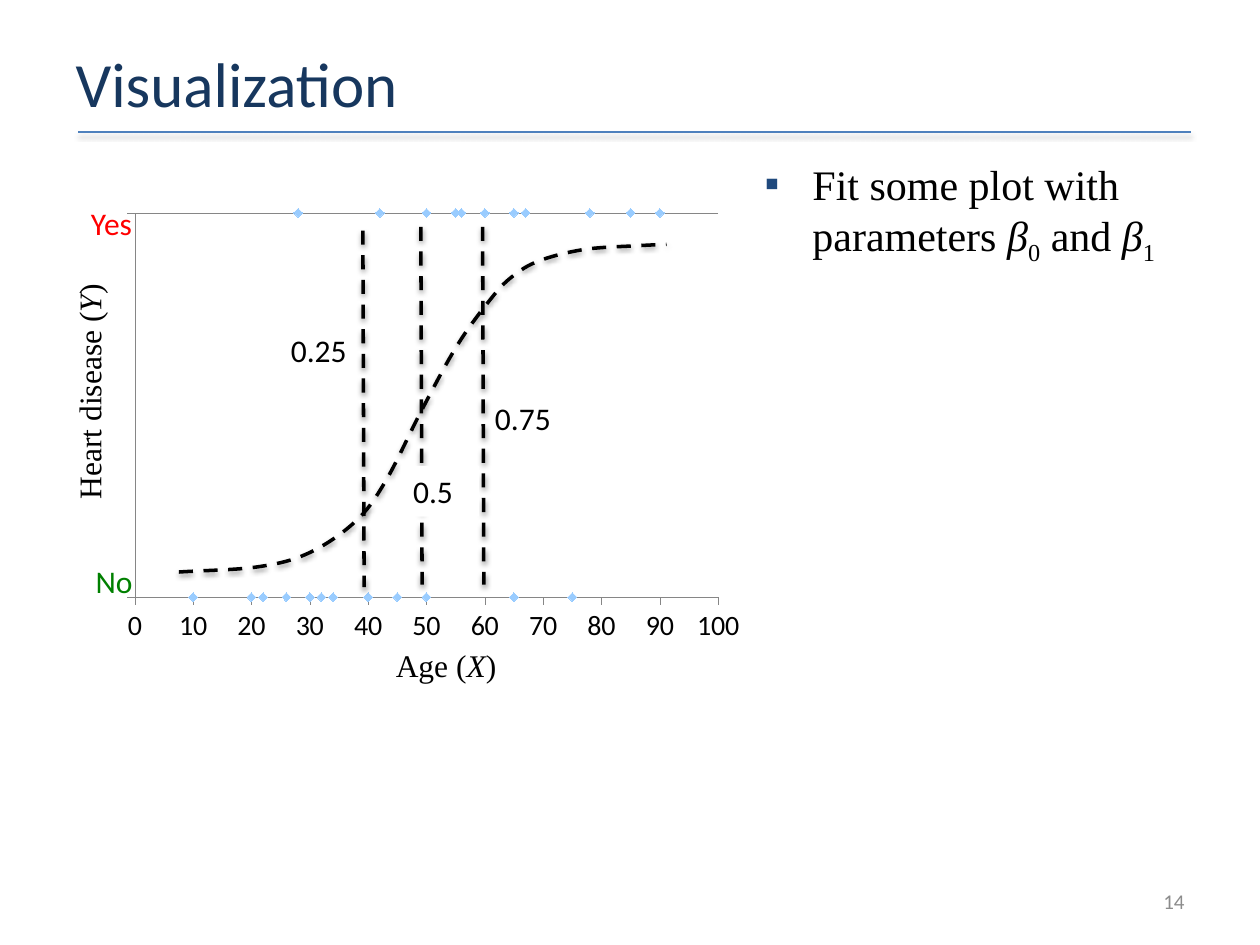
from dataclasses import dataclass

from lxml import etree
from pptx import Presentation
from pptx.chart.data import XyChartData
from pptx.dml.color import RGBColor
from pptx.enum import chart as ch, dml, shapes, text
from pptx.oxml import parse_xml
from pptx.oxml.ns import nsdecls, qn
from pptx.util import Inches, Pt


@dataclass(frozen=True)
class Theme:
    sans: str = "Calibri"
    serif: str = "Times New Roman"
    title: str = "17375E"
    rule: str = "4F81BD"
    ink: str = "000000"
    paper: str = "FFFFFF"
    yes: str = "FF0000"
    no: str = "008000"
    marker: str = "99CCFF"
    axis: str = "868686"
    bullet: str = "1F497D"
    number: str = "8C8C8C"
    title_size: int = 36
    body_size: int = 24
    label_size: int = 18
    tick_size: int = 16
    number_size: int = 12


THEME = Theme()


@dataclass(frozen=True)
class Piece:
    words: str
    italic: bool = False
    subscript: bool = False


@dataclass(frozen=True)
class Label:
    pieces: tuple[Piece, ...]
    box: tuple[float, float, float, float]
    font: str = THEME.sans
    size: int = THEME.label_size
    color: str = THEME.ink
    align: text.PP_ALIGN = text.PP_ALIGN.LEFT
    anchor: text.MSO_ANCHOR = text.MSO_ANCHOR.TOP
    rotation: int = 0
    fill: str = ""


@dataclass(frozen=True)
class Stroke:
    start: tuple[float, float]
    end: tuple[float, float]


RULE = Stroke((0.62, 1.05), (9.45, 1.05))
THRESHOLDS = (
    Stroke((3.34, 1.8), (3.35, 4.64)),
    Stroke((3.83, 1.8), (3.84, 4.64)),
    Stroke((2.88, 1.83), (2.89, 4.66)),
)
CURVE = [
    (1.42, 4.54), (2.04, 4.5), (2.45, 4.39), (2.82, 4.14), (3.06, 3.82), (3.35, 3.25),
    (3.63, 2.74), (3.89, 2.38), (4.06, 2.2), (4.28, 2.07), (4.64, 1.98), (5.07, 1.95),
    (5.29, 1.94),
]
AGES = (20, 22, 50, 30, 40, 50, 28, 40, 26, 65, 45, 10,
        34, 67, 78, 32, 56, 42, 65, 75, 55, 60, 90, 85)
DISEASE = (0, 0, 100, 0, 0, 0, 100, 0, 0, 100, 0, 0,
           0, 100, 100, 0, 100, 100, 0, 0, 100, 100, 100, 100)
CHART_BOX = (0.92, 1.62, 5.05, 3.56)
PLOT_BOX = (1.07, 1.69, 4.63, 3.05)
CENTER = text.PP_ALIGN.CENTER
AXIS_LABELS = (
    Label((Piece("Age ("), Piece("X", italic=True), Piece(")")),
          (2.94, 5.08, 1.2, 0.4), THEME.serif, align=CENTER),
    Label((Piece("Heart disease ("), Piece("Y", italic=True), Piece(")")),
          (-0.94, 2.9, 3.31, 0.42), THEME.serif, align=CENTER, rotation=270),
    Label((Piece("No"),), (0.4, 4.41, 1.01, 0.42), color=THEME.no, align=CENTER),
    Label((Piece("Yes"),), (0.38, 1.57, 1.01, 0.42), color=THEME.yes, align=CENTER),
)
PROBABILITIES = (
    Label((Piece("0.5"),), (3.18, 3.7, 0.62, 0.4), fill=THEME.paper),
    Label((Piece("0.75"),), (3.83, 3.12, 0.71, 0.4)),
    Label((Piece("0.25"),), (2.21, 2.58, 0.71, 0.4)),
)
FIT = Label(
    (Piece("Fit some plot with parameters "), Piece("β", italic=True),
     Piece("0", subscript=True), Piece(" and "), Piece("β", italic=True),
     Piece("1", subscript=True)),
    (5.97, 1.21, 3.53, 5.49), THEME.serif, THEME.body_size)
PAGE = Label((Piece("14"),), (7.17, 6.95, 2.33, 0.4), size=THEME.number_size,
             color=THEME.number, align=text.PP_ALIGN.RIGHT, anchor=text.MSO_ANCHOR.MIDDLE)
HEADING = Label((Piece("Visualization"),), (0.5, 0.3, 9, 0.71), size=THEME.title_size,
                color=THEME.title, anchor=text.MSO_ANCHOR.MIDDLE)


def rgb(color: str) -> RGBColor:
    return RGBColor.from_string(color)


def write(shape, label: Label):
    shape.left, shape.top, shape.width, shape.height = map(Inches, label.box)
    shape.rotation = label.rotation
    if label.fill:
        shape.fill.solid()
        shape.fill.fore_color.rgb = rgb(label.fill)
    frame = shape.text_frame
    frame.word_wrap = True
    frame.auto_size = text.MSO_AUTO_SIZE.NONE
    frame.vertical_anchor = label.anchor
    paragraph = frame.paragraphs[0]
    paragraph.alignment = label.align
    for piece in label.pieces:
        run = paragraph.add_run()
        run.text = piece.words
        run.font.name, run.font.size = label.font, Pt(label.size)
        run.font.color.rgb = rgb(label.color)
        run.font.italic = piece.italic
        if piece.subscript:
            run.font._element.set("baseline", "-25000")
    return paragraph


def add_label(slide, label: Label):
    return write(slide.shapes.add_textbox(0, 0, 0, 0), label)


def add_bullet(paragraph) -> None:
    paragraph.space_before = Pt(4.8)
    props = paragraph._p.get_or_add_pPr()
    props.set("marL", str(Inches(0.38)))
    props.set("indent", str(Inches(-0.38)))
    color = etree.SubElement(props, qn("a:buClr"))
    etree.SubElement(color, qn("a:srgbClr"), val=THEME.bullet)
    etree.SubElement(props, qn("a:buFont"), typeface=THEME.serif)
    etree.SubElement(props, qn("a:buChar"), char="▪")


def style_stroke(shape, color: str, width: float, dashed: bool) -> None:
    shape.line.color.rgb = rgb(color)
    shape.line.width = Pt(width)
    if dashed:
        shape.line.dash_style = dml.MSO_LINE.DASH
    shape._element.spPr.append(parse_xml(
        f'<a:effectLst {nsdecls("a")}><a:outerShdw blurRad="{Pt(3.1)}" dist="{Pt(1.6)}" '
        'dir="5400000" rotWithShape="0"><a:srgbClr val="000000"><a:alpha val="38000"/>'
        '</a:srgbClr></a:outerShdw></a:effectLst>'))


def add_stroke(slide, stroke: Stroke, color: str, width: float, dashed: bool) -> None:
    ends = map(Inches, (*stroke.start, *stroke.end))
    line = slide.shapes.add_connector(shapes.MSO_CONNECTOR.STRAIGHT, *ends)
    style_stroke(line, color, width, dashed)


def add_curve(slide, anchors: list[tuple[float, float]]) -> None:
    knots = [(Inches(x), Inches(y)) for x, y in anchors]
    builder = slide.shapes.build_freeform(*knots[0])
    builder.add_line_segments(knots[1:], close=False)
    curve = builder.convert_to_shape()
    curve.fill.background()
    style_stroke(curve, THEME.ink, 2, True)

    def mirror(end, inner):
        return tuple(2 * e - i for e, i in zip(end, inner))

    padded = [mirror(knots[0], knots[1]), *knots, mirror(knots[-1], knots[-2])]
    segments = list(curve._element.iter(qn("a:lnTo")))
    for segment, before, start, end, after in zip(
            segments, padded, padded[1:], padded[2:], padded[3:]):
        leave = [s + (e - b) / 6 for b, s, e in zip(before, start, end)]
        arrive = [e - (a - s) / 6 for s, e, a in zip(start, end, after)]
        bezier = etree.Element(qn("a:cubicBezTo"))
        for x, y in (leave, arrive, end):
            etree.SubElement(bezier, qn("a:pt"), x=str(round(x - curve.left)),
                             y=str(round(y - curve.top)))
        segment.getparent().replace(segment, bezier)


def add_scatter(slide) -> None:
    data = XyChartData()
    patients = data.add_series("Series 1")
    for age, disease in zip(AGES, DISEASE):
        patients.add_data_point(age, disease)
    chart = slide.shapes.add_chart(
        ch.XL_CHART_TYPE.XY_SCATTER, *map(Inches, CHART_BOX), data).chart
    chart.has_title = chart.has_legend = False
    chart.font.name, chart.font.size = THEME.sans, Pt(THEME.tick_size)
    chart.font.color.rgb = rgb(THEME.ink)
    age_axis, disease_axis = chart.category_axis, chart.value_axis
    age_axis.has_major_gridlines = False
    disease_axis.has_major_gridlines = True
    disease_axis.tick_label_position = ch.XL_TICK_LABEL_POSITION.NONE
    for axis, step in ((age_axis, 10), (disease_axis, 100)):
        axis.minimum_scale, axis.maximum_scale, axis.major_unit = 0, 100, step
        axis.major_tick_mark = ch.XL_TICK_MARK.OUTSIDE
        axis.minor_tick_mark = ch.XL_TICK_MARK.NONE
    for part in (age_axis, disease_axis, disease_axis.major_gridlines):
        part.format.line.color.rgb = rgb(THEME.axis)
        part.format.line.width = Pt(0.25)
    plot = chart.plots[0]
    plot.vary_by_categories = False
    series = plot.series[0]
    series.format.line.fill.background()
    series.marker.style, series.marker.size = ch.XL_MARKER_STYLE.DIAMOND, 5
    series.marker.format.fill.solid()
    series.marker.format.fill.fore_color.rgb = rgb(THEME.marker)
    series.marker.format.line.color.rgb = rgb(THEME.marker)
    area = chart._chartSpace.chart.plotArea
    for layout in area.findall(qn("c:layout")):
        area.remove(layout)
    layout = etree.Element(qn("c:layout"))
    manual = etree.SubElement(layout, qn("c:manualLayout"))
    left, top, width, height = CHART_BOX
    x, y, w, h = PLOT_BOX
    for tag, value in (("layoutTarget", "inner"), ("xMode", "edge"), ("yMode", "edge"),
                       ("x", (x - left) / width), ("y", (y - top) / height),
                       ("w", w / width), ("h", h / height)):
        etree.SubElement(manual, qn(f"c:{tag}"), val=str(value))
    area.insert(0, layout)


def main() -> None:
    deck = Presentation()
    deck.slide_width, deck.slide_height = Inches(10), Inches(7.5)
    slide = deck.slides.add_slide(deck.slide_layouts[5])
    add_stroke(slide, RULE, THEME.rule, 1, False)
    write(slide.shapes.title, HEADING)
    add_label(slide, PAGE)
    add_scatter(slide)
    for label in AXIS_LABELS:
        add_label(slide, label)
    add_curve(slide, CURVE)
    for threshold in THRESHOLDS:
        add_stroke(slide, threshold, THEME.ink, 2, True)
    for label in PROBABILITIES:
        add_label(slide, label)
    add_bullet(add_label(slide, FIT))
    deck.save("out.pptx")


if __name__ == "__main__":
    main()
